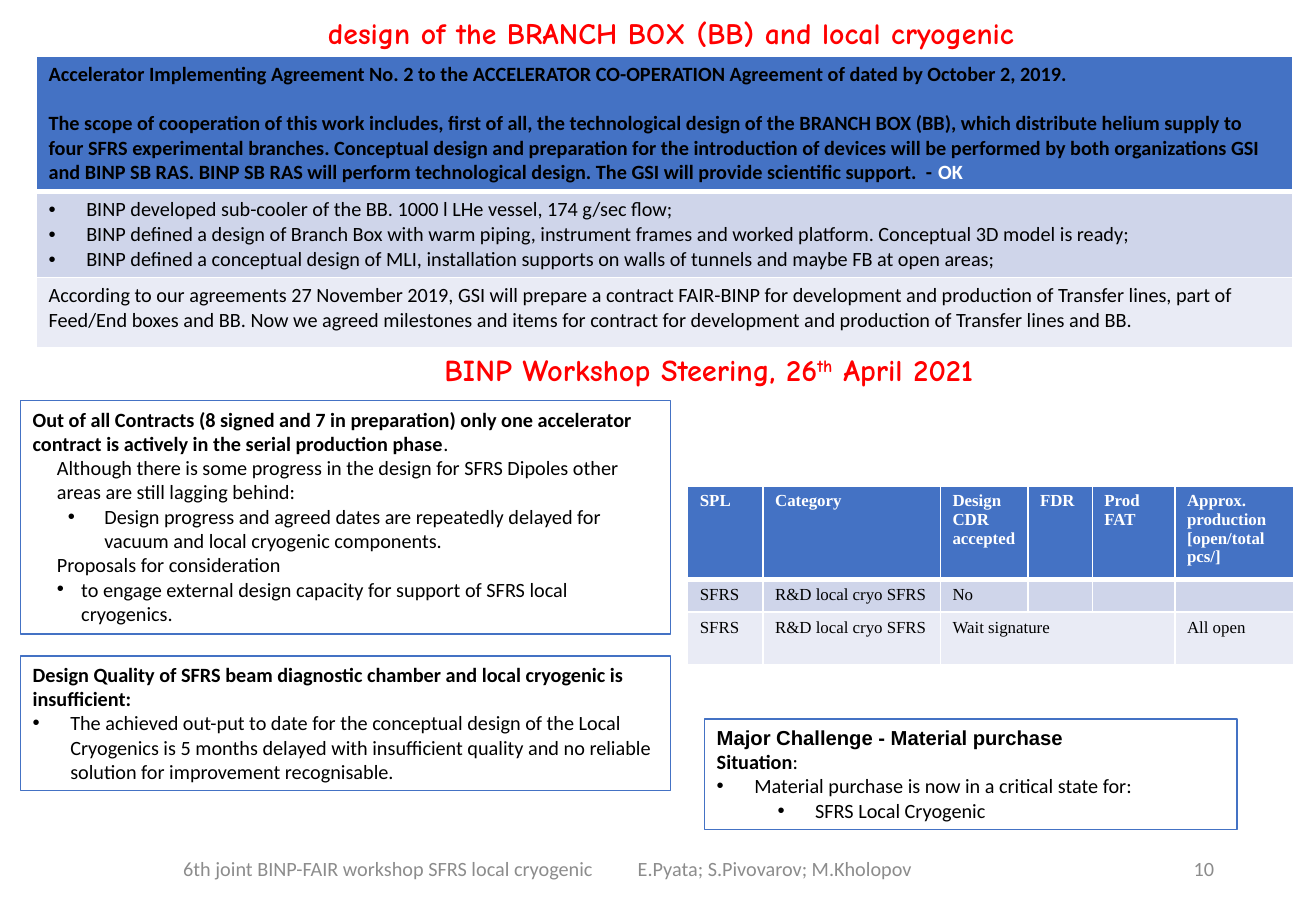
from dataclasses import dataclass

from lxml import etree
from pptx import Presentation
from pptx.dml.color import RGBColor
from pptx.enum.shapes import MSO_SHAPE
from pptx.enum.text import MSO_ANCHOR, MSO_AUTO_SIZE, PP_ALIGN
from pptx.oxml.ns import qn
from pptx.util import Inches, Pt

RECTANGLE = MSO_SHAPE.RECTANGLE
TOP, MIDDLE, BOTTOM = MSO_ANCHOR.TOP, MSO_ANCHOR.MIDDLE, MSO_ANCHOR.BOTTOM
LEFT, CENTER, RIGHT = PP_ALIGN.LEFT, PP_ALIGN.CENTER, PP_ALIGN.RIGHT
GROW = MSO_AUTO_SIZE.SHAPE_TO_FIT_TEXT

COLORS = {
    "black": "000000", "white": "FFFFFF", "red": "FF0000", "gray": "8C8C8C",
    "blue": "4472C4", "band_dark": "CFD5EA", "band_light": "E9EBF5",
}
ROW_FILLS = ("blue", "band_dark", "band_light")

BODY = {"name": "Calibri", "size": Pt(12), "bold": False, "color": "black"}
BOLD = BODY | {"bold": True}
HEADING = {"name": "Comic Neue", "size": Pt(18), "bold": True, "color": "red"}
TITLE = HEADING | {"size": Pt(17.6)}
FOOTER = BODY | {"color": "gray"}
CELL = {"name": "Times New Roman", "size": Pt(10), "bold": False, "color": "black"}
CELL_HEADER = CELL | {"bold": True, "color": "white"}


@dataclass
class Run:
    text: str
    format: dict
    baseline: int = 0


@dataclass
class Line:
    """One paragraph; indents are in inches."""
    runs: list[Run]
    indent: float = 0
    hanging: float = 0
    level: int = 0
    format: dict | None = None


@dataclass
class Box:
    left: float
    top: float
    width: float
    height: float
    lines: list[Line]
    anchor: MSO_ANCHOR = TOP
    margins: tuple[float, float] = (0.1, 0.05)


def plain(text: str, format: dict = BODY, indent: float = 0, **settings) -> Line:
    return Line([Run(text, format)], indent, format=settings)


def bullet(text: str, indent: float = 0.31, hanging: float = 0.31, level: int = 0) -> Line:
    return Line([Run(text, BODY)], indent, hanging, level)


def rgb(color: str) -> RGBColor:
    return RGBColor.from_string(COLORS[color])


def apply_font(font, format: dict) -> None:
    for name, value in format.items():
        if name == "color":
            font.color.rgb = rgb(value)
        else:
            setattr(font, name, value)


def write_lines(text_frame, lines: list[Line]) -> None:
    for index, line in enumerate(lines):
        paragraph = text_frame.add_paragraph() if index else text_frame.paragraphs[0]
        settings = {"alignment": LEFT, "level": line.level} | (line.format or {})
        for name, value in settings.items():
            setattr(paragraph, name, value)
        properties = paragraph._p.get_or_add_pPr()
        properties.set("marL", str(Inches(line.indent)))
        properties.set("indent", str(-Inches(line.hanging)))
        if line.hanging:
            etree.SubElement(properties, qn("a:buFont"), typeface="Arial")
            etree.SubElement(properties, qn("a:buChar"), char="•")
        for item in line.runs:
            run = paragraph.add_run()
            run.text = item.text
            apply_font(run.font, item.format)
            if item.baseline:
                run.font._element.set("baseline", str(item.baseline * 1000))


def add_box(slide, box: Box, framed: bool = False) -> None:
    place = [Inches(value) for value in (box.left, box.top, box.width, box.height)]
    if framed:
        shape = slide.shapes.add_shape(RECTANGLE, *place)
        shape.shadow.inherit = False
        shape.fill.background()
        shape.line.color.rgb = rgb("blue")
        shape.line.width = Pt(0.75)
    else:
        shape = slide.shapes.add_textbox(*place)
    side, edge = (Inches(value) for value in box.margins)
    frame_format = {
        "word_wrap": True, "vertical_anchor": box.anchor,
        "margin_left": side, "margin_right": side,
        "margin_top": edge, "margin_bottom": edge,
    }
    if framed:
        frame_format["auto_size"] = GROW
    for name, value in frame_format.items():
        setattr(shape.text_frame, name, value)
    write_lines(shape.text_frame, box.lines)


def add_borders(cell, header: bool) -> None:
    properties = cell._tc.get_or_add_tcPr()
    for position, side in enumerate("LRTB"):
        width = Pt(3 if header and side == "B" else 1)
        border = etree.Element(qn(f"a:ln{side}"), w=str(width))
        fill = etree.SubElement(border, qn("a:solidFill"))
        etree.SubElement(fill, qn("a:srgbClr"), val=COLORS["white"])
        properties.insert(position, border)


def add_table(slide, left: float, top: float, widths: list[float], heights: list[float],
              rows: list[list[list[Line]]]):
    table = slide.shapes.add_table(
        len(heights), len(widths), Inches(left), Inches(top),
        Inches(sum(widths)), Inches(sum(heights))).table
    for column, width in zip(table.columns, widths):
        column.width = Inches(width)
    for row_index, (height, row) in enumerate(zip(heights, rows)):
        table.rows[row_index].height = Inches(height)
        for column_index, lines in enumerate(row):
            cell = table.cell(row_index, column_index)
            cell.fill.solid()
            cell.fill.fore_color.rgb = rgb(ROW_FILLS[row_index])
            add_borders(cell, row_index == 0)
            if lines:
                write_lines(cell.text_frame, lines)
            else:
                paragraph = cell.text_frame.paragraphs[0]
                etree.SubElement(paragraph._p, qn("a:endParaRPr"), sz="1000")
    return table


TEXT_BOXES = [
    Box(0.56, 0, 9.93, 0.46, [plain("design of the BRANCH BOX (BB) and local cryogenic", TITLE,
                                    alignment=CENTER, line_spacing=0.9)], BOTTOM, (0.08, 0.04)),
    Box(3.56, 2.84, 5.4, 0.4, [Line([Run("BINP Workshop Steering, 26", HEADING),
                                     Run("th", HEADING, 30), Run(" April 2021", HEADING)])]),
    Box(1.41, 6.95, 3.7, 0.4,
        [plain("6th joint BINP-FAIR workshop SFRS local cryogenic", FOOTER)], MIDDLE),
    Box(5.15, 6.95, 3.3, 0.4, [plain("E.Pyata; S.Pivovarov; M.Kholopov", FOOTER)], MIDDLE),
    Box(8.96, 6.95, 1.13, 0.4, [plain("10", FOOTER, alignment=RIGHT)], MIDDLE),
]

FRAMED_BOXES = [
    Box(0.17, 3.3, 5.35, 1.92, [
        Line([Run("Out of all Contracts (8 signed and 7 in preparation) only one accelerator contract is actively in the serial production phase", BOLD), Run(".", BODY)]),
        plain("Although there is some progress in the design for SFRS Dipoles other areas are still lagging behind:", indent=0.2),
        bullet("Design progress and agreed dates are repeatedly delayed for vacuum and local cryogenic components.", 0.59, 0.3, 1),
        plain("Proposals for consideration", indent=0.2),
        bullet("to engage external design capacity for support of SFRS local cryogenics.", 0.4, 0.2, 1),
    ]),
    Box(0.17, 5.4, 5.35, 1.11, [
        plain("Design Quality of SFRS beam diagnostic chamber and local cryogenic is insufficient:", BOLD),
        bullet("The achieved out-put to date for the conceptual design of the Local Cryogenics is 5 months delayed with insufficient quality and no reliable solution for improvement recognisable."),
    ]),
    Box(5.8, 5.92, 4.38, 0.91, [
        plain("Major Challenge - Material purchase", BOLD | {"name": "Arial"}),
        Line([Run("Situation", BOLD), Run(":", BODY)]),
        bullet("Material purchase is now in a critical state for:"),
        bullet("SFRS Local Cryogenic", 0.81, level=1),
    ]),
]

AGREEMENT_ROWS = [
    [[plain("Accelerator Implementing Agreement No. 2 to the ACCELERATOR CO-OPERATION Agreement of dated by October 2, 2019.", BOLD, space_after=Pt(14.6)),
      Line([Run("The scope of cooperation of this work includes, first of all, the technological design of the BRANCH BOX (BB), which distribute helium supply to four SFRS experimental branches. Conceptual design and preparation for the introduction of devices will be performed by both organizations GSI and BINP SB RAS. BINP SB RAS will perform technological design. The GSI will provide scientific support.  - ", BOLD),
            Run("OK", BOLD | {"color": "white"})])]],
    [[bullet("BINP developed sub-cooler of the BB. 1000 l LHe vessel, 174 g/sec flow;"),
      bullet("BINP defined a design of Branch Box with warm piping, instrument frames and worked platform. Conceptual 3D model is ready;"),
      bullet("BINP defined a conceptual design of MLI, installation supports on walls of tunnels and maybe FB at open areas;")]],
    [[plain("According to our agreements 27 November 2019, GSI will prepare a contract FAIR-BINP for development and production of Transfer lines, part of Feed/End boxes and BB. Now we agreed milestones and items for contract for development and production of Transfer lines and BB.")]],
]

STATUS_TEXTS = [
    ["SPL", "Category", "Design CDR accepted", "FDR", "Prod FAT", "Approx. production [open/total pcs/]"],
    ["SFRS", "R&D local cryo SFRS", "No", "", "", ""],
    ["SFRS", "R&D local cryo SFRS", "Wait signature", "", "", "All open"],
]


def main() -> None:
    presentation = Presentation()
    presentation.slide_width, presentation.slide_height = Inches(10.83), Inches(7.5)
    slide = presentation.slides.add_slide(presentation.slide_layouts[6])
    add_table(slide, 0.3, 0.46, [10.34], [1.1, 0.7, 0.58], AGREEMENT_ROWS)
    status_rows = [[[plain(text, CELL if index else CELL_HEADER)] if text else [] for text in row]
                   for index, row in enumerate(STATUS_TEXTS)]
    status = add_table(slide, 5.66, 4, [0.62, 1.46, 0.72, 0.53, 0.68, 0.98],
                       [0.77, 0.27, 0.43], status_rows)
    status.cell(2, 2).merge(status.cell(2, 4))
    for box in TEXT_BOXES:
        add_box(slide, box)
    for box in FRAMED_BOXES:
        add_box(slide, box, framed=True)
    presentation.save("out.pptx")


if __name__ == "__main__":
    main()
